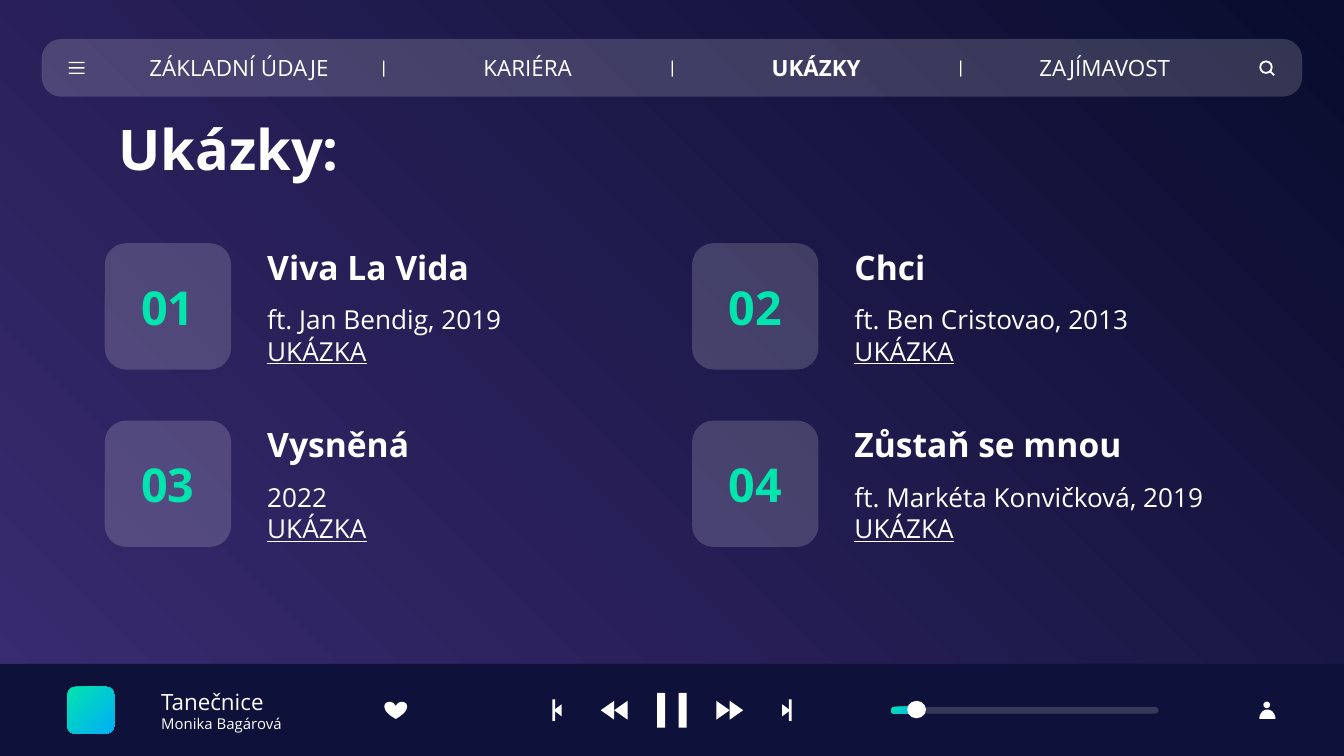
from math import cos, pi, sin

from lxml.etree import SubElement
from pptx import Presentation
from pptx.dml.color import RGBColor
from pptx.enum.shapes import MSO_CONNECTOR, MSO_SHAPE as Kind
from pptx.enum.text import MSO_ANCHOR as Anchor, MSO_AUTO_SIZE, PP_ALIGN as Align
from pptx.oxml.ns import qn
from pptx.util import Inches, Pt

FONT = "Open Sans"
WHITE, MINT, NAVY = "FFFFFF", "00E4AE", "0E1139"
GLOW = (MINT, "00AEF8")
NIGHT = ("3B2C72", "090C2E")
GLASS = 17  # opacity of the pale panels, in percent

NAV = ["ZÁKLADNÍ ÚDAJE", "KARIÉRA", "UKÁZKY", "ZAJÍMAVOST"]
SONGS = [
    ("Viva La Vida", "ft. Jan Bendig, 2019"),
    ("Chci", "ft. Ben Cristovao, 2013"),
    ("Vysněná", "2022"),
    ("Zůstaň se mnou", "ft. Markéta Konvičková, 2019"),
]


def rgb(code):
    return RGBColor.from_string(code)


def blend(fill, pair, angle):
    fill.gradient()
    fill.gradient_angle = angle
    for stop, code in zip(fill.gradient_stops, pair):
        stop.color.rgb = rgb(code)


def paint(shape, color, alpha=None):
    shape.shadow.inherit = False
    shape.line.fill.background()
    if isinstance(color, tuple):
        blend(shape.fill, color, 315)
        return shape
    shape.fill.solid()
    shape.fill.fore_color.rgb = rgb(color)
    if alpha:
        tone = shape._element.spPr.find(qn("a:solidFill")).find(qn("a:srgbClr"))
        SubElement(tone, qn("a:alpha"), val=str(alpha * 1000))
    return shape


def block(shapes, kind, x, y, w, h, color=WHITE, alpha=None, adj=None):
    shape = shapes.add_shape(kind, Inches(x), Inches(y), Inches(w), Inches(h))
    if adj is not None:
        shape.adjustments[0] = adj
    return paint(shape, color, alpha)


def poly(shapes, points):
    dots = [(Inches(x), Inches(y)) for x, y in points]
    pen = shapes.build_freeform(*dots[0])
    pen.add_line_segments(dots[1:])
    return paint(pen.convert_to_shape(), WHITE)


def arrow(shapes, x, y, w, h):
    """Triangle with its base at x and its tip at x + w."""
    poly(shapes, [(x, y - h / 2), (x + w, y), (x, y + h / 2)])


def write(box, lines, align=Align.LEFT, anchor=Anchor.MIDDLE):
    """Fill a box with lines of (text, size, colour, style)."""
    frame = box.text_frame
    frame.word_wrap = True
    frame.auto_size = MSO_AUTO_SIZE.NONE
    frame.vertical_anchor = anchor
    frame.margin_left = frame.margin_right = Inches(0.1)
    frame.margin_top = frame.margin_bottom = Inches(0.1)
    for i, (text, size, color, style) in enumerate(lines):
        para = frame.add_paragraph() if i else frame.paragraphs[0]
        para.alignment = align
        run = para.add_run()
        run.text = text
        font = run.font
        font.name, font.size = FONT, Pt(size)
        font.color.rgb = rgb(color)
        font.bold = style == "bold"
        font.underline = style == "under"


def label(shapes, x, y, w, h, lines, **opts):
    box = shapes.add_textbox(Inches(x), Inches(y), Inches(w), Inches(h))
    write(box, lines, **opts)


def heading(slide, x, y, w, h):
    title = slide.shapes.title
    title.left, title.top = Inches(x), Inches(y)
    title.width, title.height = Inches(w), Inches(h)
    write(title, [("Ukázky:", 30, WHITE, "bold")])


def menu(shapes, x, y, w, h):
    block(shapes, Kind.ROUNDED_RECTANGLE, x, y, w, h, alpha=GLASS, adj=0.34)
    # Menu lines
    bars = shapes.add_group_shape().shapes
    for i in range(3):
        block(bars, Kind.ROUNDED_RECTANGLE, x + 0.2, y + 0.17 + 0.04 * i,
              0.12, 0.01, adj=0.5)
    # Links and dividers
    step = (w - 0.94 - 2) / 3
    for i, text in enumerate(NAV):
        left = x + 0.47 + step * i
        style = "bold" if text == "UKÁZKY" else None
        label(shapes, left, y + 0.04, 2, 0.35, [(text, 12, WHITE, style)],
              align=Align.CENTER)
        if i:
            block(shapes, Kind.ROUNDED_RECTANGLE, left - step + 2.07, y + 0.16,
                  0.01, 0.12, adj=0.5)
    # Search lens
    lens = shapes.add_group_shape().shapes
    block(lens, Kind.DONUT, x + w - 0.32, y + 0.16, 0.1, 0.1, adj=0.14)
    grip = lens.add_connector(
        MSO_CONNECTOR.STRAIGHT, Inches(x + w - 0.24), Inches(y + 0.24),
        Inches(x + w - 0.21), Inches(y + 0.27))
    grip.line.width = Pt(1)
    grip.line.color.rgb = rgb(WHITE)
    SubElement(grip._element.spPr, qn("a:effectLst"))


def song(shapes, x, y, w, num, name, note):
    tile = block(shapes, Kind.ROUNDED_RECTANGLE, x, y, 0.94, 0.94,
                 alpha=GLASS, adj=0.17)
    write(tile, [(f"{num:02}", 25, MINT, "bold")], align=Align.CENTER)
    label(shapes, x + 1.11, y, w - 1.11, 0.35, [(name, 18, WHITE, "bold")])
    label(shapes, x + 1.11, y + 0.35, w - 1.11, 0.59,
          [(note, 14, WHITE, None), ("UKÁZKA", 14, WHITE, "under")],
          anchor=Anchor.TOP)


def controls(shapes, x, y):
    """Playback buttons centred on x, y."""
    for side in (-1, 1):
        block(shapes, Kind.RECTANGLE, x + 0.08 * side - 0.03, y - 0.13, 0.06, 0.26)
        for gap in (0.33, 0.43):
            arrow(shapes, x + gap * side, y, 0.1 * side, 0.14)
        arrow(shapes, x + 0.82 * side, y, 0.06 * side, 0.09)
        block(shapes, Kind.RECTANGLE, x + 0.88 * side - 0.01, y - 0.08, 0.02, 0.16)


def slider(shapes, x, y, w, h):
    for width, color, alpha in ((w, WHITE, GLASS), (0.2, GLOW, None)):
        block(shapes, Kind.ROUNDED_RECTANGLE, x, y, width, h, color, alpha, 0.5)
    block(shapes, Kind.OVAL, x + 0.12, y + h / 2 - 0.07, 0.14, 0.13)


def player(shapes, x, y, w, h):
    mid = y + h / 2
    block(shapes, Kind.RECTANGLE, x, y, w, h, NAVY)
    # Track
    block(shapes, Kind.ROUNDED_RECTANGLE, x + 0.5, y + 0.17, 0.35, 0.35, GLOW, adj=0.17)
    label(shapes, x + 1.1, y + 0.17, 1.51, 0.35,
          [("Tanečnice", 12, WHITE, None), ("Monika Bagárová", 8, WHITE, None)])
    block(shapes, Kind.HEART, x + 2.86, y + 0.28, 0.17, 0.13)
    # Buttons and volume
    controls(shapes.add_group_shape().shapes, x + w / 2, mid)
    slider(shapes.add_group_shape().shapes, x + 6.63, y + 0.32, 1.99, 0.05)
    # User
    user = shapes.add_group_shape().shapes
    block(user, Kind.OVAL, x + 9.4, y + 0.28, 0.05, 0.05)
    arc = [pi * i / 16 for i in range(17)]
    poly(user, [(x + 9.43 + 0.06 * cos(a), y + 0.41 - 0.07 * sin(a)) for a in arc])


def main():
    deck = Presentation()
    deck.slide_width, deck.slide_height = Inches(10), Inches(10) * 9 // 16
    slide = deck.slides.add_slide(deck.slide_layouts[5])
    blend(slide.background.fill, NIGHT, 45)
    shapes = slide.shapes
    menu(shapes, 0.31, 0.29, 9.38, 0.43)
    heading(slide, 0.78, 0.9, 8.44, 0.41)
    for i, (name, note) in enumerate(SONGS):
        row, col = divmod(i, 2)
        song(shapes, 0.78 + 4.37 * col, 1.81 + 1.32 * row, 4.07, i + 1, name, note)
    player(shapes, 0, 4.94, 10, 0.69)
    deck.save("out.pptx")


if __name__ == "__main__":
    main()
